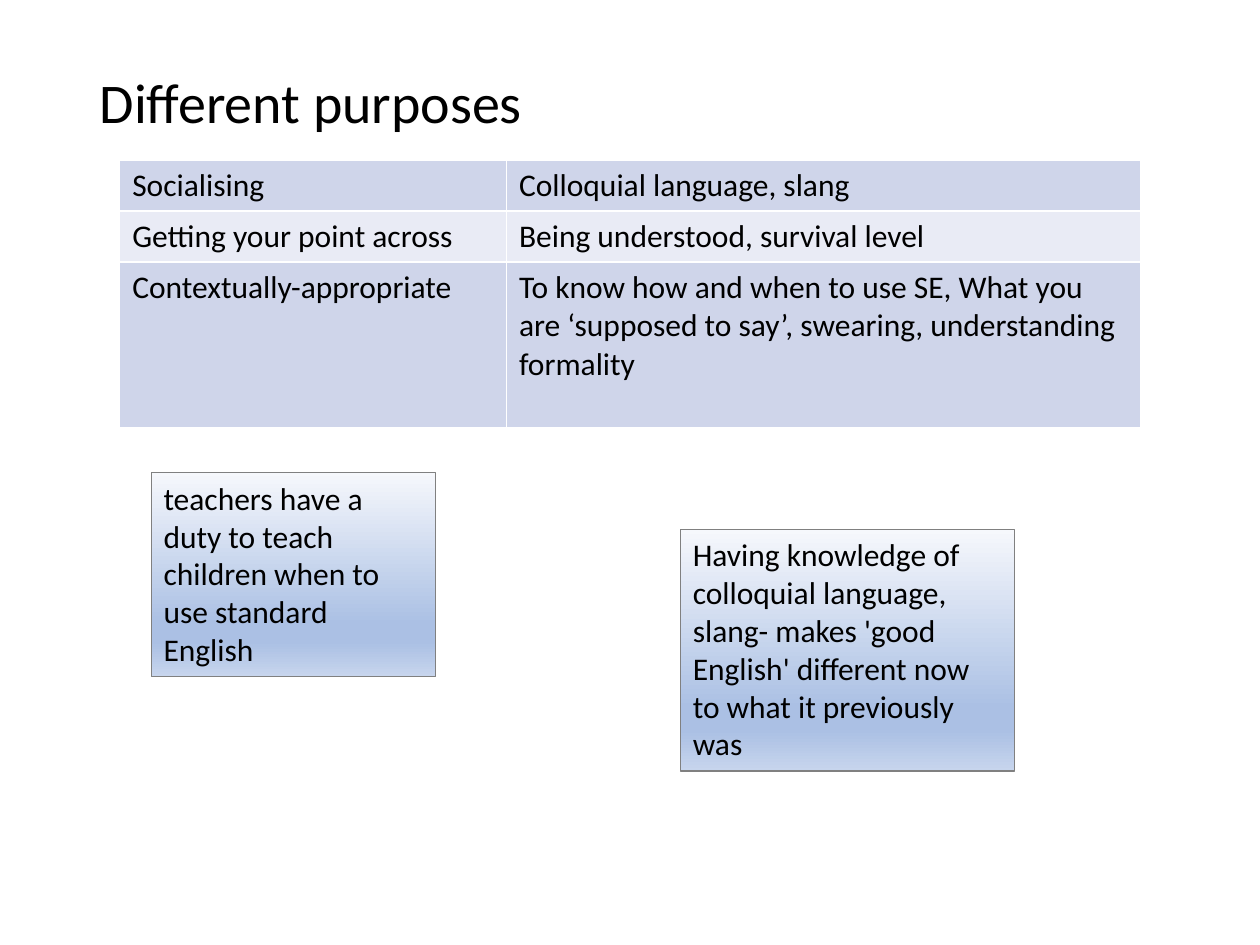
from lxml import etree
from pptx import Presentation
from pptx.dml.color import RGBColor
from pptx.enum.shapes import MSO_SHAPE
from pptx.enum.text import MSO_ANCHOR, MSO_AUTO_SIZE, PP_ALIGN
from pptx.oxml import parse_xml
from pptx.oxml.ns import nsdecls, qn
from pptx.util import Inches, Pt

FONT = "Calibri"
BLACK = RGBColor(0x00, 0x00, 0x00)
WHITE = RGBColor(0xFF, 0xFF, 0xFF)
GREY = RGBColor(0x80, 0x80, 0x80)
BANDS = [RGBColor(0xCF, 0xD5, 0xEA), RGBColor(0xE9, 0xEB, 0xF5)]
PALE = RGBColor(0xF6, 0xF8, 0xFC)
BLUE = RGBColor(0xAB, 0xC0, 0xE4)
LIGHT = RGBColor(0xC7, 0xD5, 0xED)
STOPS = [(0, PALE), (74, BLUE), (83, BLUE), (100, LIGHT)]

ROWS = [
    ("Socialising", "Colloquial language, slang"),
    ("Getting your point across", "Being understood, survival level"),
    ("Contextually-appropriate",
     "To know how and when to use SE, What you are ‘supposed to say’, "
     "swearing, understanding formality"),
]
NOTES = [
    ((1.2, 3.75, 2.26, 1.62),
     "teachers have a duty to teach children when to use standard English"),
    ((5.4, 4.2, 2.65, 1.92),
     "Having knowledge of colloquial language, slang- makes 'good English' "
     "different now to what it previously was"),
]


def write(frame, text, size):
    para = frame.paragraphs[0]
    para.alignment = PP_ALIGN.LEFT
    run = para.add_run()
    run.text = text
    run.font.name = FONT
    run.font.size = Pt(size)
    run.font.color.rgb = BLACK
    return para


def add_title(slide, box, text):
    title = slide.shapes.title
    title.left, title.top, title.width, title.height = map(Inches, box)
    title.text_frame.vertical_anchor = MSO_ANCHOR.MIDDLE
    write(title.text_frame, text, 32).line_spacing = 0.9


def add_edges(cell):
    """Draw a thin white border on all four sides, ahead of the fill."""
    props = cell._tc.get_or_add_tcPr()
    for spot, side in enumerate(("lnL", "lnR", "lnT", "lnB")):
        props.insert(spot, parse_xml(
            f'<a:{side} {nsdecls("a")} w="{Pt(1)}"><a:solidFill>'
            f'<a:srgbClr val="{WHITE}"/></a:solidFill></a:{side}>'))


def add_grid(slide, box, rows):
    left, top, width, height = box
    frame = slide.shapes.add_table(len(rows), 2, *map(Inches, box))
    table = frame.table
    first, short = 3.07, 0.405
    table.columns[0].width = Inches(first)
    table.columns[1].width = Inches(width - first)
    for i, texts in enumerate(rows):
        last = i == len(rows) - 1
        table.rows[i].height = Inches(height - short * i if last else short)
        for j, text in enumerate(texts):
            cell = table.cell(i, j)
            cell.fill.solid()
            cell.fill.fore_color.rgb = BANDS[i % 2]
            add_edges(cell)
            write(cell.text_frame, text, 18)


def shade(fill):
    """Fill from top to bottom through STOPS."""
    fill.gradient()
    fill.gradient_angle = 270
    stops = fill.gradient_stops._gsLst
    for stop in list(stops):
        stops.remove(stop)
    for spot, color in STOPS:
        stop = etree.SubElement(stops, qn("a:gs"), pos=str(spot * 1000))
        etree.SubElement(stop, qn("a:srgbClr"), val=str(color))


def add_note(slide, box, text):
    note = slide.shapes.add_shape(MSO_SHAPE.RECTANGLE, *map(Inches, box))
    note.shadow.inherit = False
    shade(note.fill)
    note.line.color.rgb = GREY
    note.line.width = Pt(0.75)
    frame = note.text_frame
    frame.word_wrap = True
    frame.auto_size = MSO_AUTO_SIZE.SHAPE_TO_FIT_TEXT
    frame.vertical_anchor = MSO_ANCHOR.TOP
    write(frame, text, 18)


def main():
    deck = Presentation()
    deck.slide_width, deck.slide_height = Inches(10), Inches(7.5)
    slide = deck.slides.add_slide(deck.slide_layouts[5])
    add_title(slide, (0.69, 0.4, 8.62, 0.87), "Different purposes")
    add_grid(slide, (0.95, 1.27, 8.1, 2.12), ROWS)
    for box, text in NOTES:
        add_note(slide, box, text)
    deck.save("out.pptx")


if __name__ == "__main__":
    main()
